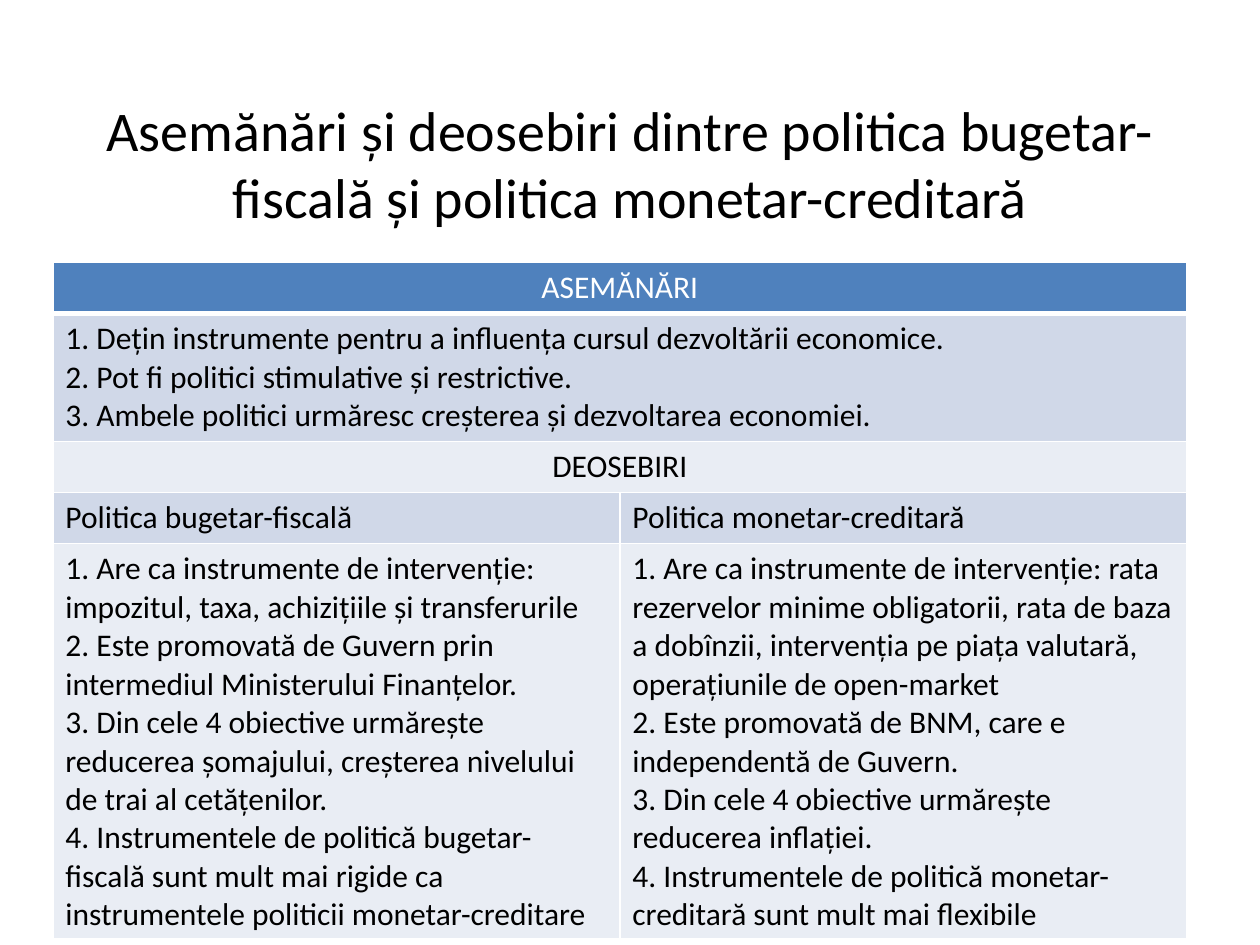
import pptx
import pptx.dml.color
import pptx.enum.text
import pptx.oxml
import pptx.oxml.ns
import pptx.util
from dataclasses import dataclass

Pt = pptx.util.Pt
ALIGN = pptx.enum.text.PP_ALIGN
ANCHOR = pptx.enum.text.MSO_ANCHOR


@dataclass(frozen=True)
class Theme:
    font: str = "Calibri"
    title_size: int = 32
    body_size: int = 18
    text: str = "000000"
    white: str = "FFFFFF"
    header: str = "4F81BD"
    band_dark: str = "D0D8E8"
    band_light: str = "E9EDF4"
    border: int = 1
    header_border: int = 3


THEME = Theme()

TITLE = ("Asemănări și deosebiri dintre politica bugetar-fiscală "
         "și politica monetar-creditară")

SIMILARITIES = [
    "1. Dețin instrumente pentru a influența cursul dezvoltării economice.",
    "2. Pot fi politici stimulative și restrictive.",
    "3. Ambele politici urmăresc creșterea și dezvoltarea economiei.",
]
FISCAL = [
    "1. Are ca instrumente de intervenție: impozitul, taxa, achizițiile și transferurile",
    "2. Este promovată de Guvern prin intermediul Ministerului Finanțelor.",
    "3. Din cele 4 obiective urmărește reducerea șomajului, creșterea nivelului "
    "de trai al cetățenilor.",
    "4. Instrumentele de politică bugetar-fiscală sunt mult mai rigide ca "
    "instrumentele politicii monetar-creditare",
]
MONETARY = [
    "1. Are ca instrumente de intervenție: rata rezervelor minime obligatorii, "
    "rata de baza a dobînzii, intervenția pe piața valutară, operațiunile de open-market",
    "2. Este promovată de BNM, care e independentă de Guvern.",
    "3. Din cele 4 obiective urmărește reducerea inflației.",
    "4. Instrumentele de politică monetar-creditară sunt mult mai flexibile",
]

# Each row: height in points, alignment, cells (one cell spans both columns)
ROWS = [
    (29.2, ALIGN.CENTER, [["ASEMĂNĂRI"]]),
    (73, ALIGN.LEFT, [SIMILARITIES]),
    (29.2, ALIGN.CENTER, [["DEOSEBIRI"]]),
    (29.2, ALIGN.LEFT, [["Politica bugetar-fiscală"], ["Politica monetar-creditară"]]),
    (226, ALIGN.LEFT, [FISCAL, MONETARY]),
]


def rgb(color):
    return pptx.dml.color.RGBColor.from_string(color)


def write_text(tf, lines, size, color, align):
    tf.word_wrap = True
    tf.text = "\n".join(lines)
    for p in tf.paragraphs:
        p.alignment = align
        for r in p.runs:
            r.font.name = THEME.font
            r.font.size = Pt(size)
            r.font.bold = False
            r.font.color.rgb = rgb(color)


def set_borders(cell, bottom):
    tc_pr = cell._tc.get_or_add_tcPr()
    widths = {"lnL": THEME.border, "lnR": THEME.border,
              "lnT": THEME.border, "lnB": bottom}
    # Border lines come before the fill in the cell properties
    for i, (tag, width) in enumerate(widths.items()):
        tc_pr.insert(i, pptx.oxml.parse_xml(
            f'<a:{tag} {pptx.oxml.ns.nsdecls("a")} w="{Pt(width)}">'
            f'<a:solidFill><a:srgbClr val="{THEME.white}"/></a:solidFill></a:{tag}>'))


def add_title(s):
    sp = s.shapes.add_textbox(Pt(36), Pt(48), Pt(648), Pt(90))
    write_text(sp.text_frame, [TITLE], THEME.title_size, THEME.text, ALIGN.CENTER)
    sp.text_frame.vertical_anchor = ANCHOR.MIDDLE


def add_comparison_table(s):
    total = sum(height for height, _, _ in ROWS)
    table = s.shapes.add_table(len(ROWS), 2, Pt(30.2), Pt(150), Pt(648), Pt(total)).table
    for i, (height, align, cells) in enumerate(ROWS):
        table.rows[i].height = Pt(height)
        is_header = i == 0
        band = THEME.band_dark if i % 2 else THEME.band_light
        # Fill and borders on both columns, merged or not
        for cell in table.rows[i].cells:
            cell.fill.solid()
            cell.fill.fore_color.rgb = rgb(THEME.header if is_header else band)
            set_borders(cell, THEME.header_border if is_header else THEME.border)
        if len(cells) == 1:
            table.cell(i, 0).merge(table.cell(i, 1))
        for j, lines in enumerate(cells):
            write_text(table.cell(i, j).text_frame, lines, THEME.body_size,
                       THEME.white if is_header else THEME.text, align)


def main():
    prs = pptx.Presentation()
    prs.slide_width, prs.slide_height = Pt(720), Pt(540)
    s = prs.slides.add_slide(prs.slide_layouts[6])
    add_title(s)
    add_comparison_table(s)
    prs.save("out.pptx")


if __name__ == "__main__":
    main()
